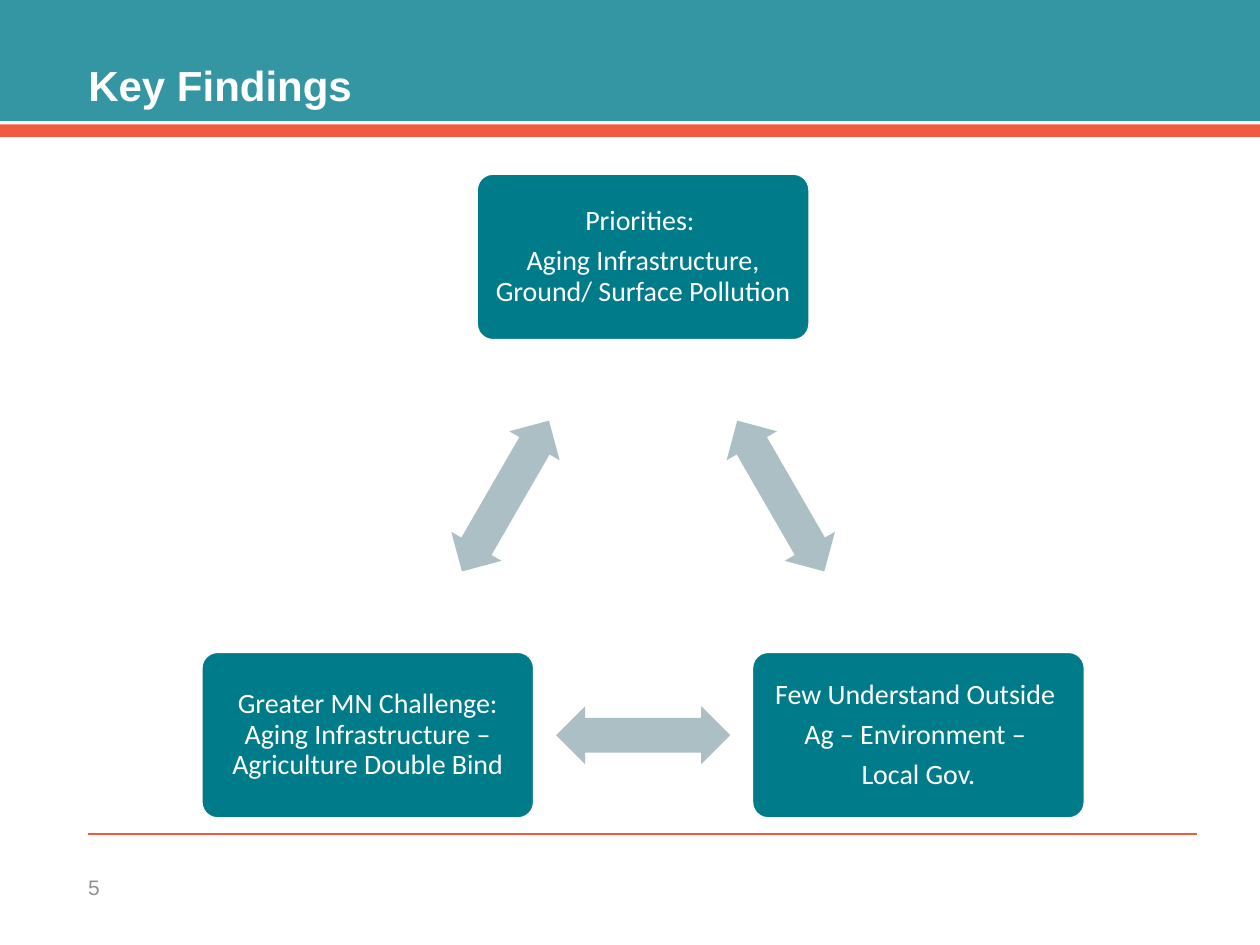
from lxml import etree
from pptx import Presentation
from pptx.dml.color import RGBColor
from pptx.enum.shapes import MSO_CONNECTOR, MSO_SHAPE
from pptx.enum.text import MSO_ANCHOR, MSO_AUTO_SIZE, PP_ALIGN
from pptx.oxml.ns import qn
from pptx.util import Cm, Pt

RECTANGLE = MSO_SHAPE.RECTANGLE
ROUNDED = MSO_SHAPE.ROUNDED_RECTANGLE
DOUBLE_ARROW = MSO_SHAPE.LEFT_RIGHT_ARROW
STRAIGHT = MSO_CONNECTOR.STRAIGHT
MIDDLE = MSO_ANCHOR.MIDDLE
LEFT, CENTER = PP_ALIGN.LEFT, PP_ALIGN.CENTER
NO_AUTOFIT = MSO_AUTO_SIZE.NONE

BAND, ORANGE, TEAL, ARROW = "3396A2", "F15B40", "007B8A", "ABBFC4"
WHITE, GREY = "FFFFFF", "919191"

PAGE_WIDTH, PAGE_HEIGHT = 25.4, 19.05
MARGIN = 1.78
CARD_WIDTH, CARD_HEIGHT = 6.73, 3.38
ARROW_WIDTH, ARROW_HEIGHT = 3.51, 1.17

# Clockwise from the top of the triangle
FINDINGS = [
    ["Priorities: ", "Aging Infrastructure, Ground/ Surface Pollution"],
    ["Few Understand Outside ", "Ag – Environment – ", "Local Gov."],
    ["Greater MN Challenge: Aging Infrastructure – Agriculture Double Bind"],
]


def color(value):
    return RGBColor.from_string(value)


def write(shape, lines, size, hue, font="Arial", bold=False, align=LEFT,
          inset=0, line_spacing=1.0, space_after=0):
    frame = shape.text_frame
    frame.word_wrap = True
    frame.auto_size = NO_AUTOFIT
    frame.vertical_anchor = MIDDLE
    frame.margin_left = frame.margin_right = Cm(inset)
    frame.margin_top = frame.margin_bottom = Cm(inset)
    for index, line in enumerate(lines):
        para = frame.add_paragraph() if index else frame.paragraphs[0]
        para.alignment = align
        para.line_spacing = line_spacing
        para.space_before = Pt(0)
        para.space_after = Pt(space_after)
        span = para.add_run()
        span.text = line
        span.font.name = font
        span.font.size = Pt(size)
        span.font.bold = bold
        span.font.color.rgb = color(hue)


def add_block(page, kind, left, top, width, height, fill, outline=None):
    block = page.shapes.add_shape(kind, Cm(left), Cm(top), Cm(width), Cm(height))
    block.shadow.inherit = False
    block.fill.solid()
    block.fill.fore_color.rgb = color(fill)
    if outline:
        block.line.color.rgb = color(outline)
        block.line.width = Pt(2)
    else:
        block.line.fill.background()
    return block


def add_header(page, left, top, width, text):
    add_block(page, RECTANGLE, left, top, width, 2.44, BAND)
    add_block(page, RECTANGLE, left, top + 2.51, width, 0.25, ORANGE)
    title = page.shapes.title
    title.left, title.top = Cm(left + MARGIN), Cm(top + 1.09)
    title.width, title.height = Cm(22.35), Cm(1.22)
    write(title, [text], 24, WHITE, bold=True)
    # Bring the title in front of the band
    title.element.getparent().append(title.element)


def add_footer(page, left, top, width, number):
    rule = page.shapes.add_connector(
        STRAIGHT, Cm(left), Cm(top), Cm(left + width), Cm(top))
    rule.line.color.rgb = color(ORANGE)
    rule.line.width = Pt(1)
    etree.SubElement(rule.element.spPr, qn("a:effectLst"))
    box = page.shapes.add_textbox(Cm(left), Cm(top + 0.56), Cm(1.27), Cm(1.02))
    write(box, [number], 12, GREY)


def add_cycle(page, left, top, width, height, findings):
    """Cards on the corners of a triangle, with a double arrow on each side."""
    first_x, last_x = left + CARD_WIDTH / 2, left + width - CARD_WIDTH / 2
    first_y, last_y = top + CARD_HEIGHT / 2, top + height - CARD_HEIGHT / 2
    corners = [(left + width / 2, first_y), (last_x, last_y), (first_x, last_y)]
    for index, ((x, y), lines) in enumerate(zip(corners, findings)):
        card = add_block(page, ROUNDED, x - CARD_WIDTH / 2, y - CARD_HEIGHT / 2,
                         CARD_WIDTH, CARD_HEIGHT, TEAL, WHITE)
        card.adjustments[0] = 0.1
        write(card, lines, 16, WHITE, font="Calibri", align=CENTER,
              inset=0.2, line_spacing=0.9, space_after=5.6)

        next_x, next_y = corners[(index + 1) % len(corners)]
        arrow = add_block(page, DOUBLE_ARROW,
                          (x + next_x - ARROW_WIDTH) / 2,
                          (y + next_y - ARROW_HEIGHT) / 2,
                          ARROW_WIDTH, ARROW_HEIGHT, ARROW)
        arrow.adjustments[0], arrow.adjustments[1] = 0.6, 0.5
        arrow.rotation = 60 + 120 * index


def main():
    deck = Presentation()
    deck.slide_width, deck.slide_height = Cm(PAGE_WIDTH), Cm(PAGE_HEIGHT)
    page = deck.slides.add_slide(deck.slide_layouts[5])
    add_header(page, 0, 0, PAGE_WIDTH, "Key Findings")
    add_footer(page, MARGIN, 16.81, 22.35, "5")
    add_cycle(page, 4.05, 3.49, 17.83, 13.02, FINDINGS)
    deck.save("out.pptx")


if __name__ == "__main__":
    main()
